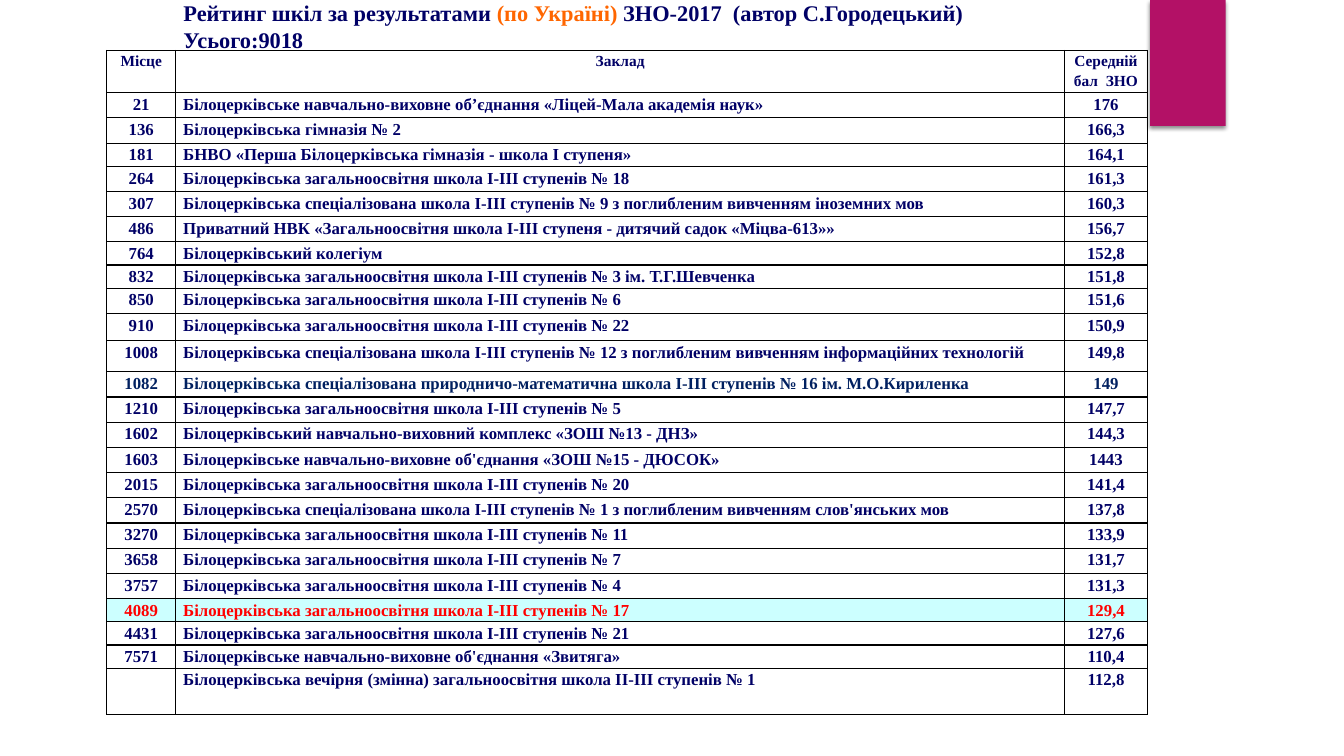
from lxml.etree import SubElement
from pptx import Presentation
from pptx.dml.color import RGBColor
from pptx.enum.shapes import MSO_SHAPE
from pptx.enum.text import MSO_ANCHOR, MSO_AUTO_SIZE, PP_ALIGN
from pptx.oxml import parse_xml
from pptx.oxml.ns import nsdecls, qn
from pptx.util import Emu, Inches, Pt

COLS, ROWS = 160, 90
HUES = {"navy": "000066", "ink": "002060", "red": "FF0000", "orange": "FF6600",
        "plum": "B31166", "white": "FFFFFF", "aqua": "CCFFFF", "black": "000000"}
BASE = "Білоцерківська загальноосвітня школа І-ІІІ ступенів № "
SPEC = "Білоцерківська спеціалізована школа І-ІІІ ступенів № "

# place, school, score
RANKS = [
    ("Місце", "Заклад", "Середній бал  ЗНО"),
    ("21", "Білоцерківське навчально-виховне об’єднання «Ліцей-Мала академія наук»", "176"),
    ("136", "Білоцерківська гімназія № 2", "166,3"),
    ("181", "БНВО «Перша Білоцерківська гімназія - школа І ступеня»", "164,1"),
    ("264", BASE + "18", "161,3"),
    ("307", SPEC + "9 з поглибленим вивченням іноземних мов", "160,3"),
    ("486", "Приватний НВК «Загальноосвітня школа І-ІІІ ступеня - дитячий садок «Міцва-613»»", "156,7"),
    ("764", "Білоцерківський колегіум", "152,8"),
    ("832", BASE + "3 ім. Т.Г.Шевченка", "151,8"),
    ("850", BASE + "6", "151,6"),
    ("910", BASE + "22", "150,9"),
    ("1008", SPEC + "12 з поглибленим вивченням інформаційних технологій", "149,8"),
    ("1082", "Білоцерківська спеціалізована природничо-математична школа І-ІІІ ступенів № 16 ім. М.О.Кириленка", "149"),
    ("1210", BASE + "5", "147,7"),
    ("1602", "Білоцерківський навчально-виховний комплекс «ЗОШ №13 - ДНЗ»", "144,3"),
    ("1603", "Білоцерківське навчально-виховне об'єднання «ЗОШ №15 - ДЮСОК»", "1443"),
    ("2015", BASE + "20", "141,4"),
    ("2570", SPEC + "1 з поглибленим вивченням слов'янських мов", "137,8"),
    ("3270", BASE + "11", "133,9"),
    ("3658", BASE + "7", "131,7"),
    ("3757", BASE + "4", "131,3"),
    ("4089", BASE + "17", "129,4"),
    ("4431", BASE + "21", "127,6"),
    ("7571", "Білоцерківське навчально-виховне об'єднання «Звитяга»", "110,4"),
    ("", "Білоцерківська вечірня (змінна) загальноосвітня школа ІІ-ІІІ ступенів № 1", "112,8"),
]
# Row heights in grid rows; all others are 3
TALL = {0: 5.04, 10: 3.24, 11: 3.72, 24: 5.52} | dict.fromkeys((3, 7, 8, 21, 22, 23), 2.76)
# Text and fill colours of rows that stand out
MARKS = {"1082": ("ink", "white"), "4089": ("red", "aqua")}


def tint(name):
    return RGBColor.from_string(HUES[name])


class Deck:
    def __init__(self, face):
        self.face = face
        self.prs = Presentation()
        self.prs.slide_width, self.prs.slide_height = Emu(12192000), Inches(7.5)
        self.slide = self.prs.slides.add_slide(self.prs.slide_layouts[5])

    def x(self, cols):
        return round(self.prs.slide_width * cols / COLS)

    def y(self, rows):
        return round(self.prs.slide_height * rows / ROWS)

    def box(self, left, top, wide, high):
        return self.x(left), self.y(top), self.x(wide), self.y(high)

    def style(self, para, size, hue=None):
        font = para.font
        font.name, font.size, font.bold = self.face, Pt(size), True
        if hue:
            font.color.rgb = tint(hue)

    def block(self, hue, *spot):
        rect = self.slide.shapes.add_shape(MSO_SHAPE.RECTANGLE, *self.box(*spot))
        rect.fill.solid()
        rect.fill.fore_color.rgb = tint(hue)
        rect.line.fill.background()
        rect.shadow.inherit = False
        glow = rect.fill._xPr.find(qn("a:effectLst"))
        drop = SubElement(glow, qn("a:outerShdw"), blurRad=str(Pt(3)), dist=str(Pt(2)),
                          dir="5400000", rotWithShape="0")
        shade = SubElement(drop, qn("a:srgbClr"), val=HUES["black"])
        SubElement(shade, qn("a:alpha"), val="45000")

    def title(self, parts, *spot):
        head = self.slide.shapes.title
        head.left, head.top, head.width, head.height = self.box(*spot)
        frame = head.text_frame
        frame.word_wrap, frame.auto_size = True, MSO_AUTO_SIZE.NONE
        frame.vertical_anchor = MSO_ANCHOR.MIDDLE
        para = frame.paragraphs[0]
        para.alignment = PP_ALIGN.LEFT
        self.style(para, 16)
        for text, hue in parts:
            if text == "\n":
                para.add_line_break()
                continue
            run = para.add_run()
            run.text = text
            run.font.color.rgb = tint(hue)

    def cell(self, cell, text, size, align, hue, fill):
        cell.margin_left = cell.margin_right = self.x(0.9)
        cell.margin_top = cell.margin_bottom = 0
        para = cell.text_frame.paragraphs[0]
        if text:
            para.text = text
        para.alignment, para.line_spacing = align, 1.15
        self.style(para, size, hue)
        props = cell._tc.get_or_add_tcPr()
        for side in "LRTB":
            props.append(parse_xml(
                f'<a:ln{side} {nsdecls("a")} w="{Pt(1)}"><a:solidFill>'
                f'<a:srgbClr val="{HUES["black"]}"/></a:solidFill></a:ln{side}>'))
        if fill:
            cell.fill.solid()
            cell.fill.fore_color.rgb = tint(fill)
        else:
            cell.fill.background()

    def table(self, data, left, top, wides, highs):
        spot = self.box(left, top, sum(wides), sum(highs))
        table = self.slide.shapes.add_table(len(data), len(wides), *spot).table
        table.first_row = table.horz_banding = False
        for col, wide in zip(table.columns, wides):
            col.width = self.x(wide)
        for i, (row, high) in enumerate(zip(data, highs)):
            table.rows[i].height = self.y(high)
            hue, fill = MARKS.get(row[0], ("navy", None))
            for j, text in enumerate(row):
                align = PP_ALIGN.LEFT if i and j == 1 else PP_ALIGN.CENTER
                self.cell(table.cell(i, j), text, 12 if i else 11, align, hue, fill)


def main():
    deck = Deck("Times New Roman")
    deck.block("plum", 136.92, 0, 9, 15)
    deck.title([("Рейтинг шкіл за результатами ", "navy"), ("(по Україні)", "orange"),
                (" ЗНО-2017  (автор С.Городецький)", "navy"), ("\n", None),
                ("Усього:9018", "navy")], 20.64, 0, 108, 6.24)
    highs = [TALL.get(i, 3) for i in range(len(RANKS))]
    deck.table(RANKS, 12.72, 6, (8.2, 105.84, 9.84), highs)
    deck.prs.save("out.pptx")


if __name__ == "__main__":
    main()
